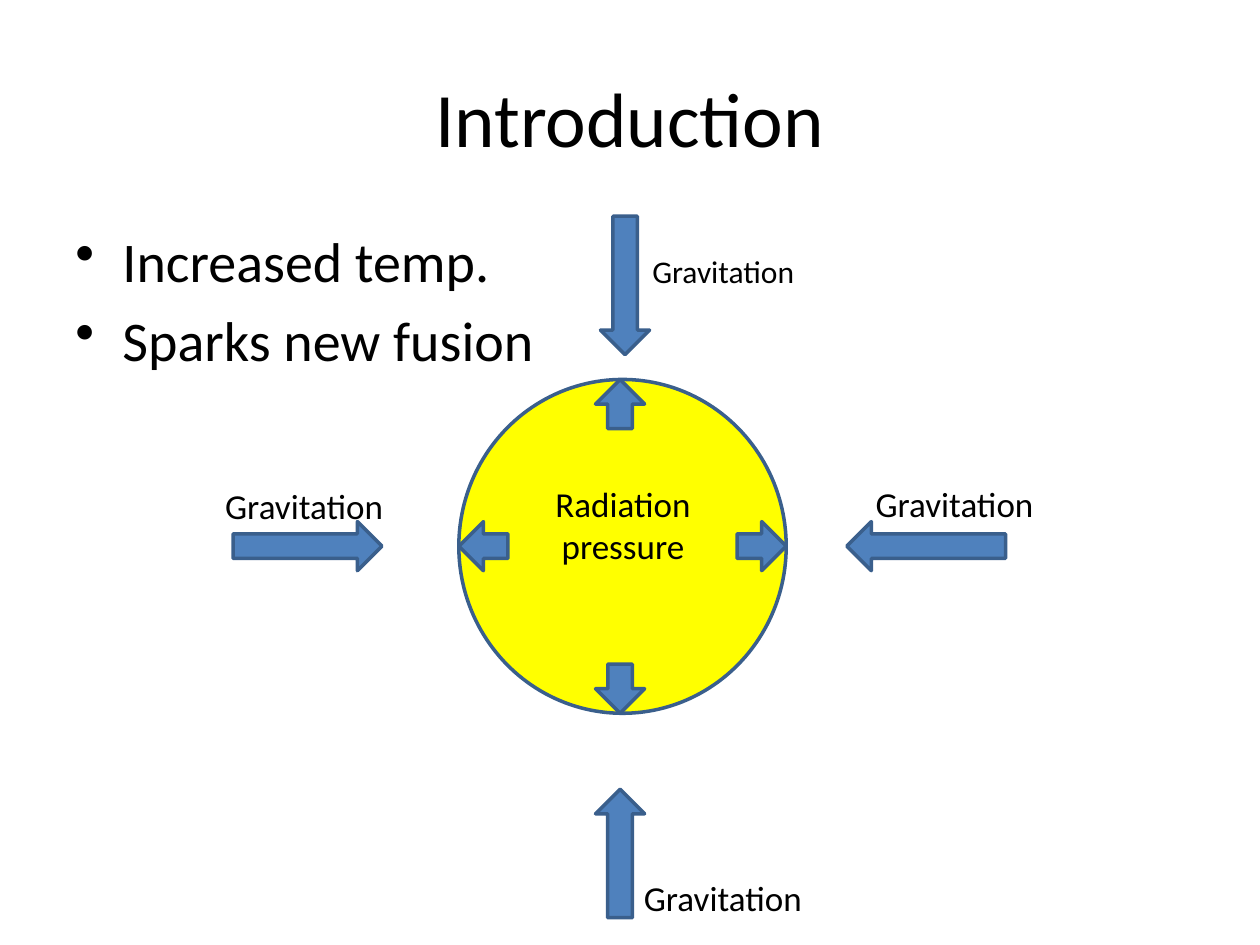
from math import cos, radians, sin

from lxml.etree import SubElement
from pptx import Presentation
from pptx.dml.color import RGBColor
from pptx.enum.shapes import MSO_SHAPE
from pptx.enum.text import MSO_ANCHOR, PP_ALIGN
from pptx.oxml.ns import qn
from pptx.util import Cm, Pt

TITLE = "Introduction"
POINTS = ["Increased temp.", "Sparks new fusion"]
CORE = "Radiation pressure"
FORCE = "Gravitation"
LABELS = [
    (4.29, 9.65, 20),
    (17.4, 9.6, 20),
    (12.9, 4.95, 18),
    (12.73, 17.55, 20),
]
# side: (outward angle, gap to the sun, length, sideways shift)
SIDES = [
    (0, 1.22, 3.2, 0),
    (90, 1.53, 2.59, 0),
    (180, 1.55, 3, 0),
    (270, 0.5, 2.79, 0.1),
]


class Theme:
    font = "Calibri"
    ink = RGBColor.from_string("000000")
    sun = RGBColor.from_string("FFFF00")
    arrow = RGBColor.from_string("4F81BD")
    edge = RGBColor.from_string("3A5F8C")
    title, body, label = 44, 32, 20
    line = 2


SUN_X, SUN_Y, SUN_W, SUN_H = 9.25, 7.65, 6.6, 6.73
MID_X, MID_Y = 12.5, 11.01
THICK = 0.99

deck = Presentation()
deck.slide_width, deck.slide_height = Cm(25.4), Cm(19.05)
slide = deck.slides.add_slide(deck.slide_layouts[6])


def write(text, box, size=Theme.label, align=PP_ALIGN.LEFT,
          anchor=MSO_ANCHOR.TOP, bullet=False):
    frame = slide.shapes.add_textbox(*map(Cm, box)).text_frame
    frame.word_wrap = True
    frame.vertical_anchor = anchor
    frame.text = text
    for para in frame.paragraphs:
        para.alignment = align
        font = para.font
        font.name, font.size = Theme.font, Pt(size)
        font.color.rgb = Theme.ink
        if bullet:
            para.space_before = Pt(size * 0.2)
            props = para._p.get_or_add_pPr()
            props.set("marL", str(Cm(0.95)))
            props.set("indent", str(Cm(-0.95)))
            mark = SubElement(props, qn("a:buChar"))
            mark.set("char", "•")
            props.insert(1, mark)


def draw(kind, box, fill, turn=0):
    shape = slide.shapes.add_shape(kind, *map(Cm, box))
    shape.shadow.inherit = False
    shape.fill.solid()
    shape.fill.fore_color.rgb = fill
    shape.line.color.rgb = Theme.edge
    shape.line.width = Pt(Theme.line)
    shape.rotation = turn


def point(mid_x, mid_y, length, turn):
    box = (mid_x - length / 2, mid_y - THICK / 2, length, THICK)
    draw(MSO_SHAPE.RIGHT_ARROW, box, Theme.arrow, turn % 360)


write(TITLE, (1.27, 0.76, 22.86, 3.18), size=Theme.title,
      align=PP_ALIGN.CENTER, anchor=MSO_ANCHOR.MIDDLE)
write("\n".join(POINTS), (1.27, 4.45, 22.86, 12.57),
      size=Theme.body, bullet=True)
draw(MSO_SHAPE.OVAL, (SUN_X, SUN_Y, SUN_W, SUN_H), Theme.sun)

for turn, gap, length, shift in SIDES:
    dx, dy = round(cos(radians(turn))), round(sin(radians(turn)))
    rim_x = SUN_X + SUN_W / 2 * (1 + dx) if dx else MID_X
    rim_y = SUN_Y + SUN_H / 2 * (1 + dy) if dy else MID_Y
    out = gap + length / 2
    point(rim_x + dx * out + shift, rim_y + dy * out, length, turn + 180)
    point(rim_x - dx * THICK / 2, rim_y - dy * THICK / 2, THICK, turn)

for left, top, size in LABELS:
    write(FORCE, (left, top, 4.6, 1.11), size=size)
write(CORE, (10.26, 9.6, 4.6, 1.96), align=PP_ALIGN.CENTER)

deck.save("out.pptx")
